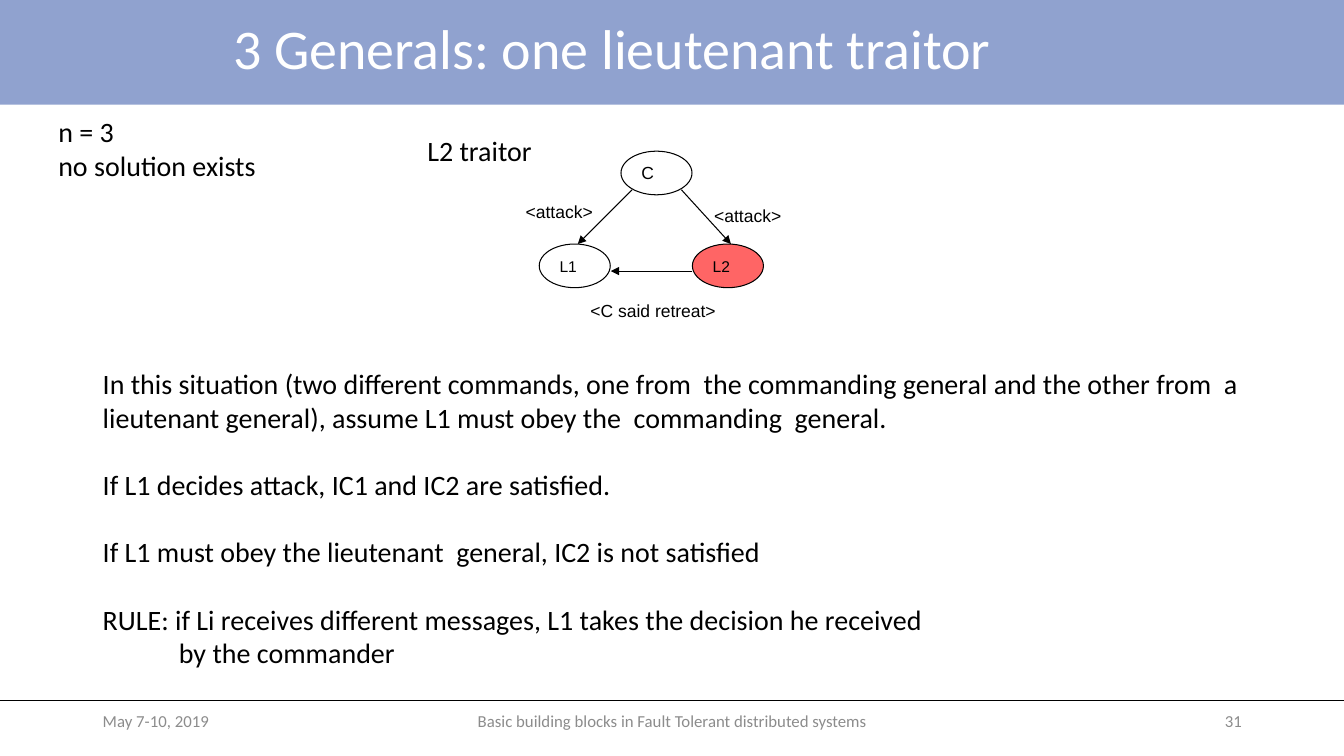
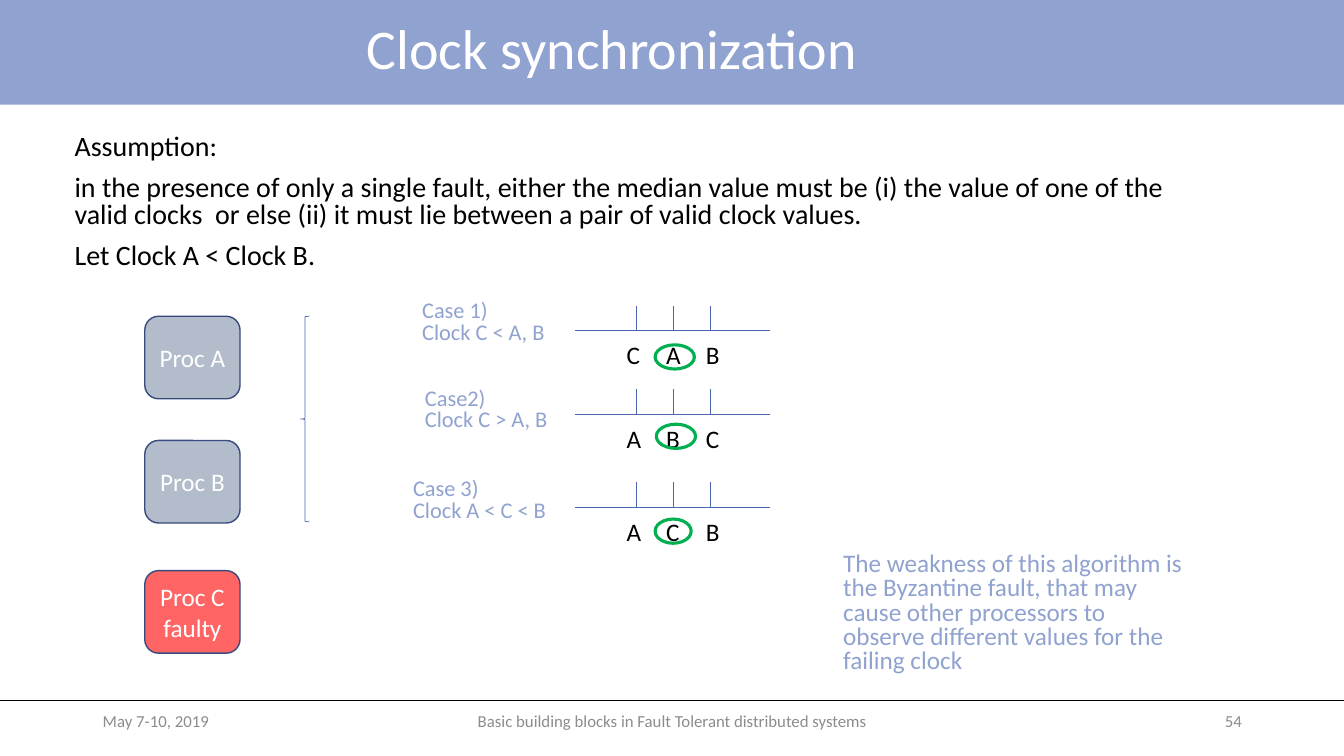
import pptx
import pptx.util
import pptx.dml.color
import pptx.enum.shapes
import pptx.enum.text
import pptx.oxml.ns
from lxml import etree

Cm = pptx.util.Cm
Pt = pptx.util.Pt
RGBColor = pptx.dml.color.RGBColor
KIND = pptx.enum.shapes.MSO_SHAPE
ALIGN = pptx.enum.text.PP_ALIGN
MIDDLE = pptx.enum.text.MSO_ANCHOR.MIDDLE
qn = pptx.oxml.ns.qn

BLACK = RGBColor(0, 0, 0)
WHITE = RGBColor(255, 255, 255)
BAND = RGBColor(0x90, 0xA2, 0xCF)
GREY = RGBColor(0x8C, 0x8C, 0x8C)
RED = RGBColor(0xFF, 0x65, 0x65)
STEEL = RGBColor(0xB2, 0xBC, 0xCB)
NAVY = RGBColor(0x37, 0x4B, 0x7F)
BLUE = RGBColor(0x4A, 0x66, 0xAC)
GREEN = RGBColor(0, 0xB0, 0x50)

WIDE, HIGH = 33.87, 19.05
RULE = 17.65


def write(frame, lines, size, color=BLACK, font="Calibri",
          align=ALIGN.LEFT, lead=None, gap=0):
    """Fill a text frame; gap is the space in points between paragraphs."""
    for i, line in enumerate(lines):
        para = frame.paragraphs[0] if i == 0 else frame.add_paragraph()
        para.text = line
        para.alignment = align
        if lead:
            para.line_spacing = lead
        if i and gap:
            para.space_before = Pt(gap)
        para.font.size = Pt(size)
        para.font.name = font
        para.font.color.rgb = color


def text(slide, area, lines, size, wrap=True, mid=False, **style):
    box = slide.shapes.add_textbox(*map(Cm, area))
    frame = box.text_frame
    frame.word_wrap = wrap
    if mid:
        frame.vertical_anchor = MIDDLE
    write(frame, lines, size, **style)
    return frame


def shape(slide, kind, area, fill=None, line=None, width=1):
    item = slide.shapes.add_shape(kind, *map(Cm, area))
    item.shadow.inherit = False
    if fill is None:
        item.fill.background()
    else:
        item.fill.solid()
        item.fill.fore_color.rgb = fill
    if line is None:
        item.line.fill.background()
    else:
        item.line.color.rgb = line
        item.line.width = Pt(width)
    return item


def line(slide, ends, color=BLACK, width=0.5, arrow=False):
    item = slide.shapes.add_connector(
        pptx.enum.shapes.MSO_CONNECTOR.STRAIGHT, *map(Cm, ends))
    item.line.color.rgb = color
    item.line.width = Pt(width)
    props = item.element.spPr
    if arrow:
        etree.SubElement(props.find(qn("a:ln")), qn("a:tailEnd"), type="triangle")
    etree.SubElement(props, qn("a:effectLst"))


def start(deck, title, number):
    """Add a slide with the shared band, title, rule and footer."""
    slide = deck.slides.add_slide(deck.slide_layouts[6])
    shape(slide, KIND.RECTANGLE, (0, 0, WIDE, 2.64), BAND)
    line(slide, (0, RULE, WIDE, RULE))
    text(slide, (0, 0, 30.84, 2.59), [title], 40, mid=True,
         color=WHITE, align=ALIGN.CENTER, lead=0.9)
    for left, width, words, align in (
            (2.34, 7.62, "May 7-10, 2019", ALIGN.LEFT),
            (11.23, 11.43, "Basic building blocks in Fault Tolerant distributed systems",
             ALIGN.CENTER),
            (23.93, 7.62, number, ALIGN.RIGHT)):
        text(slide, (left, RULE, width, 1.02), [words], 12, mid=True,
             color=GREY, align=align)
    return slide


def node(slide, left, top, name, size, fill=WHITE):
    oval = shape(slide, KIND.OVAL, (left, top, 1.79, 1.1), fill, BLACK, 0.75)
    frame = oval.text_frame
    frame.word_wrap = False
    frame.vertical_anchor = MIDDLE
    write(frame, [name], size, font="Arial")


def proc(slide, top, lines, fill):
    box = shape(slide, KIND.ROUNDED_RECTANGLE, (3.65, top, 2.4, 2.08), fill, NAVY)
    box.text_frame.vertical_anchor = MIDDLE
    write(box.text_frame, lines, 18, WHITE, align=ALIGN.CENTER)


def case(slide, axis, note, lines, marks, ring):
    """Draw a time line at height axis with three marks, the median ringed."""
    left, step, tick = 14.49, 0.94, 0.63
    line(slide, (left, axis, left + 4.92, axis), BLUE)
    for i, mark in enumerate(marks):
        x = left + 1.54 + i * step
        line(slide, (x, axis - tick, x, axis), BLUE)
        text(slide, (15.54 + i, axis + 0.1, 0.76, 1.02), [mark], 18)
    text(slide, (*note, 1.37), lines, 16, wrap=False, color=BAND, lead=0.8)
    shape(slide, KIND.OVAL, (*ring, 0.61), line=GREEN, width=2.25)


def generals(deck):
    slide = start(deck, "3 Generals: one lieutenant traitor", "31")
    node(slide, 15.65, 3.81, "C", 12.5)
    node(slide, 13.59, 6.15, "L1", 11.1)
    node(slide, 17.45, 6.15, "L2", 11.1, RED)
    for ends in ((15.93, 4.78, 14.56, 6.15), (17.17, 4.78, 18.42, 6.15),
                 (17.45, 6.83, 15.39, 6.83)):
        line(slide, ends, width=0.75, arrow=True)
    for left, top, width, words in ((13, 4.93, 2.21, "<attack>"),
                                    (17.75, 5.03, 2.21, "<attack>"),
                                    (14.63, 7.44, 3.68, "<C said retreat>")):
        text(slide, (left, top, width, 0.79), [words], 12.5, wrap=False, font="Arial")
    text(slide, (10.52, 3.23, 3.15, 1.12), ["L2 traitor"], 20, wrap=False)
    frame = text(slide, (2.34, 9.12, 29.21, 8.48), [
        "In this situation (two different commands, one from  the commanding general "
        "and the other from  a lieutenant general), assume L1 must obey the  "
        "commanding  general.",
        "If L1 decides attack, IC1 and IC2 are satisfied.",
        "If L1 must obey the lieutenant  general, IC2 is not satisfied",
        "RULE: if Li receives different messages, L1 takes the decision he received",
        "by the commander"], 20, gap=24)
    last = frame.paragraphs[-1]
    last.space_before = Pt(0)
    last._p.get_or_add_pPr().set("marL", str(Cm(1.92)))
    text(slide, (1.22, 2.77, 6.81, 1.96), ["n = 3", "no solution exists"], 20)


def clocks(deck):
    slide = start(deck, "Clock synchronization", "54")
    text(slide, (1.63, 3.28, 29.21, 3.73), [
        "Assumption:",
        "in the presence of only a single fault, either the median value must be "
        "(i) the value of one of the valid clocks  or else (ii) it must lie between "
        "a pair of valid clock values.",
        "Let Clock A < Clock B."], 20, lead=0.8, gap=10)
    proc(slide, 7.97, ["Proc A"], STEEL)
    proc(slide, 11.1, ["Proc B"], STEEL)
    proc(slide, 14.38, ["Proc C", "faulty"], RED)
    text(slide, (21, 13.82, 9.22, 3.35), [
        "The weakness of this algorithm is the Byzantine fault, that may cause other "
        "processors to observe different values for the failing clock"],
         18, color=BAND, lead=0.8)
    case(slide, 8.33, (10.39, 7.47, 3.63), ["Case 1)", "Clock C < A, B"],
         "CAB", (16.51, 8.69, 0.99))
    case(slide, 10.44, (10.46, 9.68, 3.63), ["Case2)", "Clock C > A, B"],
         "ABC", (16.54, 10.69, 0.99))
    case(slide, 12.78, (10.16, 11.96, 3.91), ["Case 3)", "Clock A < C < B"],
         "ACB", (16.51, 13.08, 0.91))
    shape(slide, KIND.LEFT_BRACE, (7.57, 7.97, 0.23, 5.18), line=BLUE, width=0.5)


def main():
    deck = pptx.Presentation()
    deck.slide_width = Cm(WIDE)
    deck.slide_height = Cm(HIGH)
    generals(deck)
    clocks(deck)
    deck.save("out.pptx")


if __name__ == "__main__":
    main()
